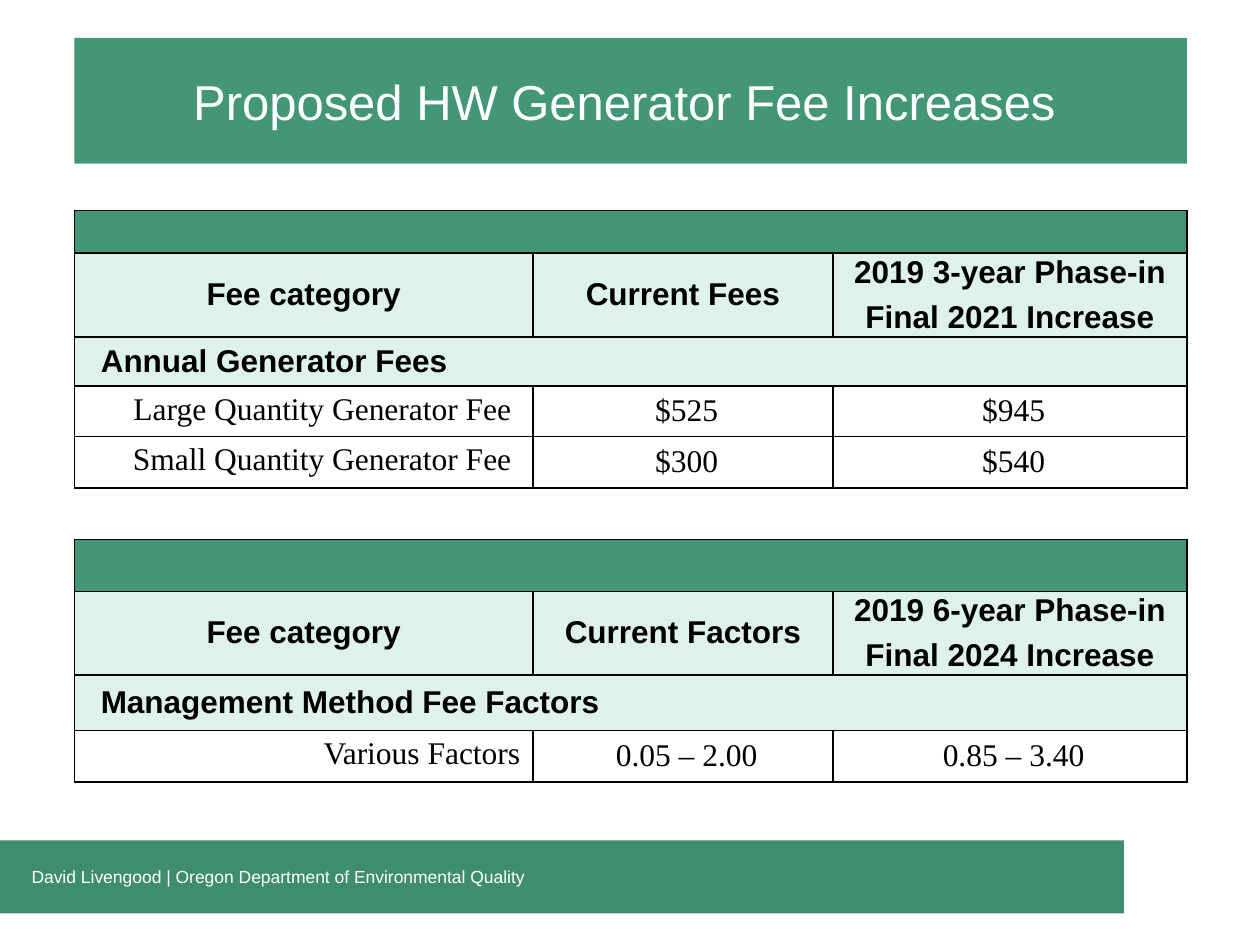
import lxml.etree
import pptx
import pptx.dml.color
import pptx.enum.shapes
import pptx.enum.text
import pptx.oxml.ns
import pptx.util

RGBColor = pptx.dml.color.RGBColor
Align = pptx.enum.text.PP_ALIGN
Anchor = pptx.enum.text.MSO_ANCHOR
Inches = pptx.util.Inches
Pt = pptx.util.Pt

GREEN = RGBColor(0x43, 0x97, 0x77)
FOOTER_GREEN = RGBColor(0x3F, 0x8D, 0x6F)
MINT = RGBColor(0xDF, 0xF1, 0xEB)
WHITE = RGBColor(0xFF, 0xFF, 0xFF)
BLACK = RGBColor(0x00, 0x00, 0x00)
SANS, SERIF = "Arial", "Times New Roman"

GRID_COLUMNS, GRID_ROWS = 100, 75
COLUMN_WIDTHS = [36.4, 23.8, 28.1]

# Each row: kind, height in grid rows, cell texts
FEE_ROWS = [
    ("band", 3.4, []),
    ("header", 6.6, ["Fee category", "Current Fees",
                     "2019 3-year Phase-in\nFinal 2021 Increase"]),
    ("section", 3.9, ["Annual Generator Fees"]),
    ("fee", 4, ["Large Quantity Generator Fee", "$525", "$945"]),
    ("fee", 4.1, ["Small Quantity Generator Fee", "$300", "$540"]),
    ("spacer", 4.1, []),
    ("band", 4.1, []),
    ("header", 6.6, ["Fee category", "Current Factors",
                     "2019 6-year Phase-in\nFinal 2024 Increase"]),
    ("section", 4.4, ["Management Method Fee Factors"]),
    ("factor", 4.1, ["Various Factors", "0.05 – 2.00", "0.85 – 3.40"]),
]
ROW_FILLS = {"band": GREEN, "header": MINT, "section": MINT}
LABEL_RIGHT_MARGINS = {"fee": 0.17, "factor": 0.1}


class FeeSlide:
    """Holds the slide and its style; lengths are grid columns and rows."""

    def __init__(self, presentation):
        self.slide = presentation.slides.add_slide(presentation.slide_layouts[6])
        self.column = presentation.slide_width / GRID_COLUMNS
        self.row = presentation.slide_height / GRID_ROWS

    def area(self, left, top, width, height):
        return (round(left * self.column), round(top * self.row),
                round(width * self.column), round(height * self.row))

    def add_text(self, frame, text, size, color, font=SANS, bold=False,
                 align=Align.LEFT, after=0, indent=0):
        """Fill a text frame, one paragraph for each line of text."""
        for number, line in enumerate(text.split("\n")):
            paragraph = frame.add_paragraph() if number else frame.paragraphs[0]
            paragraph.alignment = align
            paragraph.space_after = Pt(after)
            paragraph._p.get_or_add_pPr().set("marL", str(Inches(indent)))
            run = paragraph.add_run()
            run.text = line
            run.font.name, run.font.size, run.font.bold = font, Pt(size), bold
            run.font.color.rgb = color

    def bar(self, area, fill, text, size, align, left_inset, right_inset):
        shape = self.slide.shapes.add_shape(
            pptx.enum.shapes.MSO_SHAPE.RECTANGLE, *self.area(*area))
        shape.shadow.inherit = False
        shape.fill.solid()
        shape.fill.fore_color.rgb = fill
        shape.line.fill.background()
        frame = shape.text_frame
        frame.word_wrap = True
        frame.vertical_anchor = Anchor.MIDDLE
        frame.margin_left, frame.margin_right = Inches(left_inset), Inches(right_inset)
        self.add_text(frame, text, size, WHITE, align=align)

    def borders(self, cell, sides):
        properties = cell._tc.get_or_add_tcPr()
        qn = pptx.oxml.ns.qn
        for side in "LRTB":
            line = lxml.etree.SubElement(properties, qn(f"a:ln{side}"), w=str(Pt(1)))
            if side in sides:
                fill = lxml.etree.SubElement(line, qn("a:solidFill"))
                lxml.etree.SubElement(fill, qn("a:srgbClr"), val=str(BLACK))
            else:
                lxml.etree.SubElement(line, qn("a:noFill"))

    def cell_text(self, cell, kind, position, text):
        if kind == "header":
            self.add_text(cell.text_frame, text, 18, BLACK, bold=True,
                          align=Align.CENTER, after=6)
        elif kind == "section":
            self.add_text(cell.text_frame, text, 18, BLACK, bold=True,
                          after=6, indent=0.2)
        elif position == 0:
            cell.vertical_anchor = Anchor.TOP
            cell.margin_top = cell.margin_bottom = Inches(0.05)
            cell.margin_right = Inches(LABEL_RIGHT_MARGINS[kind])
            self.add_text(cell.text_frame, text, 18, BLACK, SERIF, align=Align.RIGHT)
        else:
            self.add_text(cell.text_frame, text, 18, BLACK, SERIF,
                          align=Align.CENTER, after=6, indent=0.06)

    def table(self, left, top, widths, rows):
        height = sum(row[1] for row in rows)
        table = self.slide.shapes.add_table(
            len(rows), len(widths),
            *self.area(left, top, sum(widths), height)).table
        table.first_row = table.horz_banding = False
        for table_column, width in zip(table.columns, widths):
            table_column.width = round(width * self.column)
        for index, (kind, row_height, texts) in enumerate(rows):
            table.rows[index].height = round(row_height * self.row)
            cells = [table.cell(index, c) for c in range(len(widths))]
            for cell in cells:
                cell.margin_left = cell.margin_right = Inches(0.01)
                cell.margin_top = cell.margin_bottom = Inches(0.01)
                cell.vertical_anchor = Anchor.MIDDLE
                self.borders(cell, "TB" if kind == "spacer" else "LRTB")
                cell.fill.solid()
                cell.fill.fore_color.rgb = ROW_FILLS.get(kind, WHITE)
            if kind in ("band", "section"):
                cells[0].merge(cells[-1])
            for position, text in enumerate(texts):
                self.cell_text(cells[position], kind, position, text)


def main():
    presentation = pptx.Presentation()
    presentation.slide_width, presentation.slide_height = Inches(10), Inches(7.5)
    page = FeeSlide(presentation)
    page.bar((5.9, 3, 88.3, 10), GREEN, "Proposed HW Generator Fee Increases",
             28, Align.CENTER, 0.1, 0.2)
    page.bar((0, 66.7, 89.2, 5.8), FOOTER_GREEN,
             "David Livengood | Oregon Department of Environmental Quality",
             10, Align.LEFT, 0.25, 0.1)
    page.table(5.9, 16.7, COLUMN_WIDTHS, FEE_ROWS)
    presentation.save("out.pptx")


if __name__ == "__main__":
    main()
